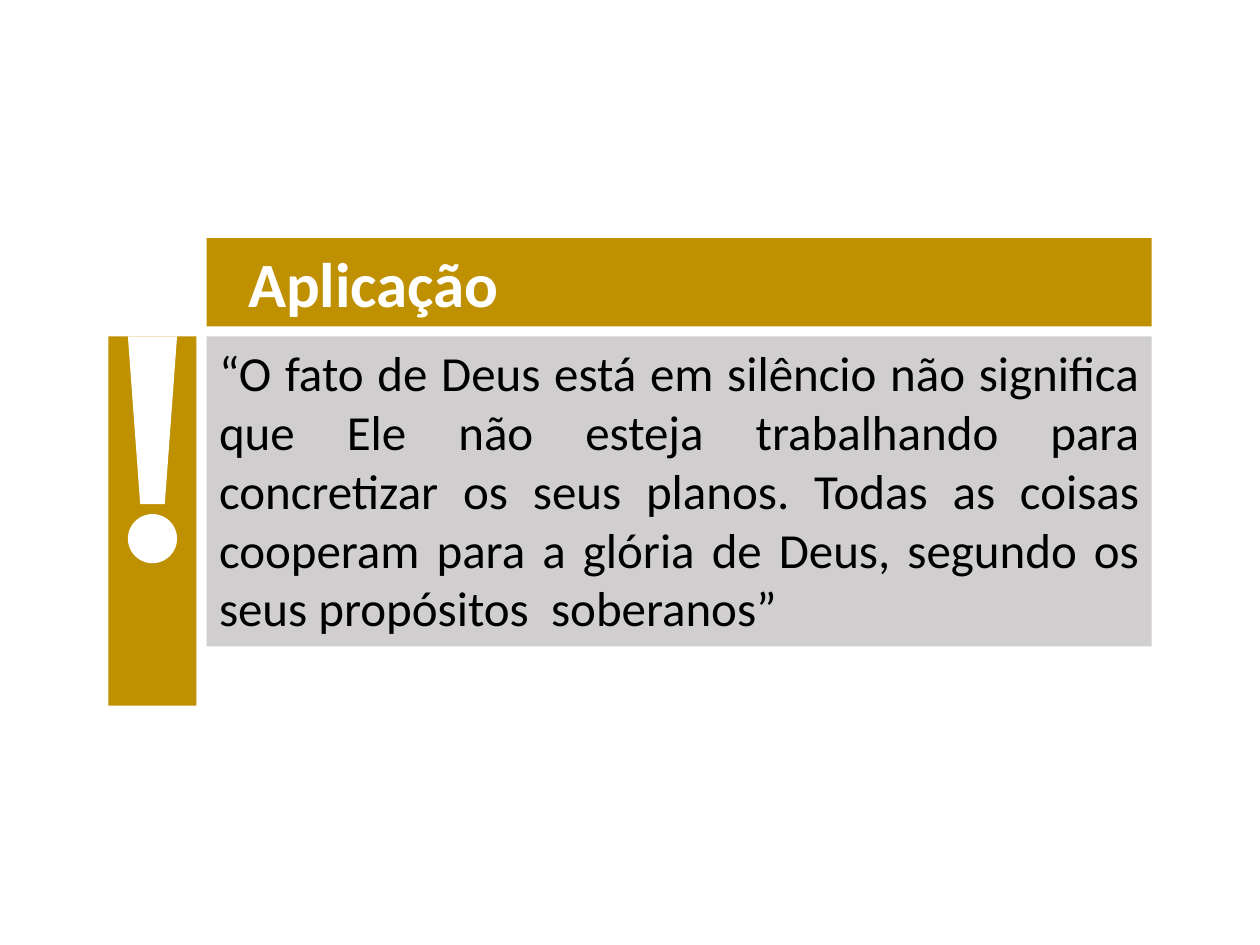
from pptx import Presentation
from pptx.dml.color import RGBColor
from pptx.enum.shapes import MSO_SHAPE
from pptx.enum.text import MSO_ANCHOR, PP_ALIGN
from pptx.util import Inches, Pt

GOLD = RGBColor(0xBF, 0x90, 0x00)
GREY = RGBColor(0xD0, 0xCE, 0xCE)
WHITE = RGBColor(0xFF, 0xFF, 0xFF)
BLACK = RGBColor(0x00, 0x00, 0x00)

# Grid: a narrow mark column and a wide text column, a heading row and a body row
BAR = 0.7
GAP = 0.08
MARK_LEFT = 0.86
TEXT_LEFT = MARK_LEFT + BAR + GAP
TEXT_WIDTH = 7.5
HEAD_TOP = 1.89
BODY_TOP = HEAD_TOP + BAR + GAP
BODY_HEIGHT = 2.46
MARK_HEIGHT = 2.93
HEAD_INDENT = 0.23

# Exclamation mark, centred in the mark column
DOT = 0.39
STROKE_HEIGHT = 1.33
DOT_LEFT = MARK_LEFT + (BAR - DOT) / 2
DOT_TOP = BODY_TOP + STROKE_HEIGHT + GAP

prs = Presentation()
prs.slide_width, prs.slide_height = Inches(10), Inches(7.5)
slide = prs.slides.add_slide(prs.slide_layouts[6])


def add_block(kind, left, top, width, height, color):
    block = slide.shapes.add_shape(
        kind, Inches(left), Inches(top), Inches(width), Inches(height))
    block.shadow.inherit = False
    block.fill.solid()
    block.fill.fore_color.rgb = color
    block.line.fill.background()
    return block


def write(holder, text, size, color, align, bold=False):
    frame = holder.text_frame
    frame.word_wrap = True
    frame.vertical_anchor = MSO_ANCHOR.TOP
    frame.text = text
    paragraph = frame.paragraphs[0]
    paragraph.alignment = align
    font = paragraph.runs[0].font
    font.name, font.size, font.bold = "Calibri", Pt(size), bold
    font.color.rgb = color


add_block(MSO_SHAPE.RECTANGLE, TEXT_LEFT, HEAD_TOP, TEXT_WIDTH, BAR, GOLD)
heading = slide.shapes.add_textbox(
    Inches(TEXT_LEFT + HEAD_INDENT), Inches(HEAD_TOP), Inches(6.02), Inches(BAR))
write(heading, "Aplicação", 36, WHITE, PP_ALIGN.LEFT, bold=True)

quote = add_block(MSO_SHAPE.RECTANGLE, TEXT_LEFT, BODY_TOP, TEXT_WIDTH, BODY_HEIGHT, GREY)
write(quote,
      "“O fato de Deus está em silêncio não significa que Ele não esteja "
      "trabalhando para concretizar os seus planos. Todas as coisas cooperam "
      "para a glória de Deus, segundo os seus propósitos  soberanos”",
      28, BLACK, PP_ALIGN.JUSTIFY)

add_block(MSO_SHAPE.RECTANGLE, MARK_LEFT, BODY_TOP, BAR, MARK_HEIGHT, GOLD)
add_block(MSO_SHAPE.OVAL, DOT_LEFT, DOT_TOP, DOT, DOT, WHITE)
stroke = add_block(MSO_SHAPE.TRAPEZOID, DOT_LEFT, BODY_TOP, DOT, STROKE_HEIGHT, WHITE)
stroke.rotation = 180

prs.save("out.pptx")
